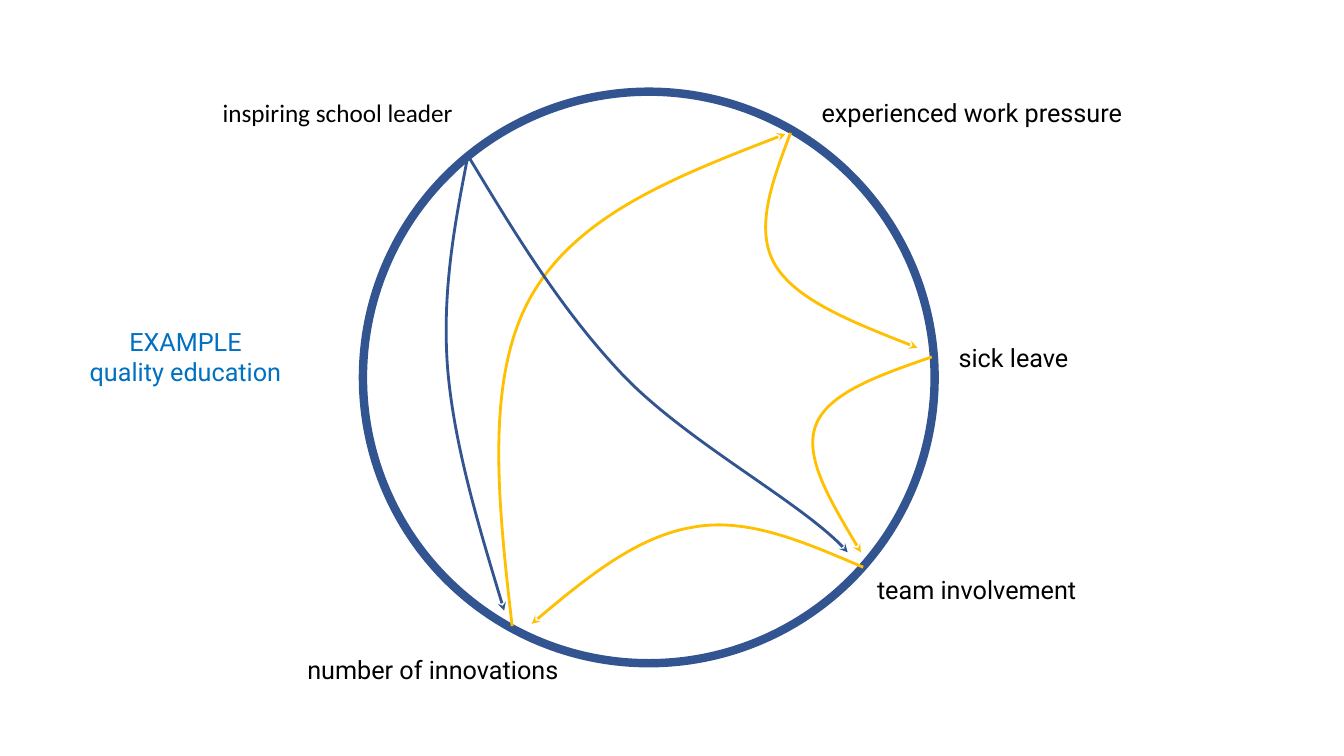
from lxml.etree import SubElement
from pptx import Presentation
from pptx.dml.color import RGBColor
from pptx.enum.shapes import MSO_SHAPE as Shape
from pptx.enum.text import MSO_AUTO_SIZE as AutoSize, PP_ALIGN as Align
from pptx.oxml.ns import qn
from pptx.util import Inches, Pt

COLORS = {"blue": "325491", "yellow": "FFC000", "text": "000000", "title": "0070C0"}
STEPS = 24  # samples along each curve piece, to measure its extent

# Left, top, width, height on a grid of one-inch columns and rows
RING = (3.6, 0.91, 5.67, 5.67)
CAPTION = (0.78, 3.19, 2.12, 0.71)
LABELS = [
    ("experienced work pressure", "Roboto", (8.05, 0.92, 3.21, 0.4)),
    ("sick leave", "Roboto", (9.41, 3.35, 1.3, 0.4)),
    ("team involvement", "Roboto", (8.6, 5.65, 2.28, 0.4)),
    ("number of innovations", "Roboto", (2.95, 6.44, 2.72, 0.4)),
    ("inspiring school leader", "Calibri", (2.11, 0.92, 2.51, 0.4)),
]

# Each influence: two joined Bezier pieces, in percent of the ring's box
INFLUENCES = [
    # sick leave -> team involvement
    ("yellow", [(99.5, 46.4), (90.3, 49.6), (81.3, 52.7), (79.2, 58.4),
                (77.1, 64), (82.2, 72.3), (87.1, 80.6)]),
    # team involvement -> number of innovations
    ("yellow", [(87.5, 83.2), (77.2, 78.8), (67.2, 74.4), (57.7, 76.2),
                (48, 77.8), (38.6, 85.4), (29.5, 93.1)]),
    # number of innovations -> work pressure
    ("yellow", [(26.1, 93.5), (23.6, 71.8), (21.3, 50.3), (29.3, 36),
                (37.4, 21.5), (55.6, 14.5), (73.9, 7.4)]),
    # work pressure -> sick leave
    ("yellow", [(74.8, 7.2), (71.6, 15.7), (68.4, 24), (72.1, 30.3),
                (75.8, 36.5), (86.4, 40.6), (97, 44.8)]),
    # school leader -> team involvement
    ("blue", [(18.2, 10.9), (26.3, 24.3), (34.4, 37.9), (45.5, 49.6),
              (56.6, 61.2), (77.6, 72.3), (84.8, 80.6)]),
    # school leader -> number of innovations
    ("blue", [(18.3, 11.5), (16, 23.3), (13.8, 35.1), (14.8, 48.3),
              (15.9, 61.6), (20.3, 76.2), (24.7, 90.8)]),
]


def rgb(name):
    return RGBColor.from_string(COLORS[name])


def outline(sp, color, width):
    sp.shadow.inherit = False
    sp.fill.background()
    sp.line.color.rgb = rgb(color)
    sp.line.width = Pt(width)


def add_ring(slide, box):
    sp = slide.shapes.add_shape(Shape.OVAL, *map(Inches, box))
    outline(sp, "blue", 6)


def add_label(slide, box, lines, font, color="text", align=Align.LEFT):
    tf = slide.shapes.add_textbox(*map(Inches, box)).text_frame
    tf.word_wrap = False
    tf.auto_size = AutoSize.SHAPE_TO_FIT_TEXT
    p = tf.paragraphs[0]
    p.alignment = align
    for i, line in enumerate(lines):
        if i:
            p.add_line_break()
        r = p.add_run()
        r.text = line
        r.font.name = font
        r.font.size = Pt(18)
        r.font.color.rgb = rgb(color)


def bezier(points, t):
    """Point at share t of a cubic Bezier piece."""
    u = 1 - t
    weights = (u ** 3, 3 * u * u * t, 3 * u * t * t, t ** 3)
    return tuple(sum(w * pt[axis] for w, pt in zip(weights, points)) for axis in (0, 1))


def set_curve(sp, pts):
    """Give a freeform a smooth outline through cubic pieces."""
    outline_el = next(sp.element.iter(qn("a:path")))
    for child in list(outline_el):
        outline_el.remove(child)
    pieces = [("a:moveTo", pts[:1]), ("a:cubicBezTo", pts[1:4]), ("a:cubicBezTo", pts[4:])]
    for tag, group in pieces:
        piece = SubElement(outline_el, qn(tag))
        for x, y in group:
            SubElement(piece, qn("a:pt"), x=str(x - sp.left), y=str(y - sp.top))


def add_influence(slide, box, color, controls):
    left, top, width, height = box
    pts = [(Inches(left + x * width / 100), Inches(top + y * height / 100))
           for x, y in controls]
    # The sampled curve fixes the tight box of the shape
    samples = [bezier(pts[k:k + 4], n / STEPS)
               for k in (0, 3) for n in range(1, STEPS + 1)]
    builder = slide.shapes.build_freeform(*pts[0])
    builder.add_line_segments(samples, close=False)
    sp = builder.convert_to_shape()
    set_curve(sp, pts)
    outline(sp, color, 2)
    # Arrowhead at the end of the curve
    SubElement(sp.line._get_or_add_ln(), qn("a:tailEnd"), type="stealth")


def build_circle_slide(prs):
    slide = prs.slides.add_slide(prs.slide_layouts[6])
    add_ring(slide, RING)
    for text, font, box in LABELS:
        add_label(slide, box, [text], font)
    add_label(slide, CAPTION, ["EXAMPLE", "quality education"], "Roboto",
              "title", Align.CENTER)
    for color, controls in INFLUENCES:
        add_influence(slide, RING, color, controls)


def main():
    prs = Presentation()
    prs.slide_width, prs.slide_height = Inches(13.33), Inches(7.5)
    build_circle_slide(prs)
    prs.save("out.pptx")


if __name__ == "__main__":
    main()
